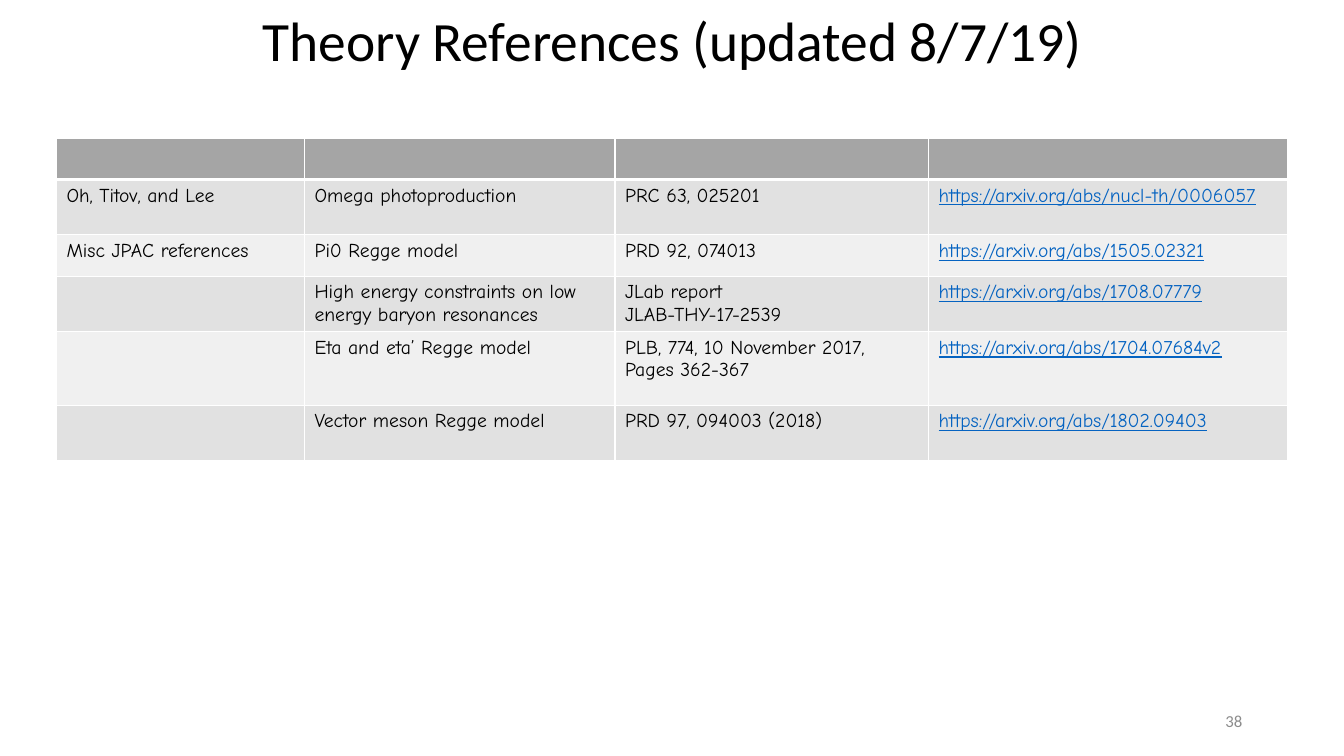
from lxml import etree
from pptx import Presentation
from pptx.dml.color import RGBColor
from pptx.enum.text import MSO_ANCHOR, MSO_AUTO_SIZE, PP_ALIGN
from pptx.oxml.ns import qn
from pptx.util import Inches, Pt

MIDDLE = MSO_ANCHOR.MIDDLE
NO_FIT = MSO_AUTO_SIZE.NONE
CENTER, RIGHT = PP_ALIGN.CENTER, PP_ALIGN.RIGHT

COLORS = {
    "text": "000000",
    "link": "0563C1",
    "number": "8C8C8C",
    "header": "A5A5A5",
    "odd": "E1E1E1",
    "even": "F0F0F0",
    "border": "FFFFFF",
}
TITLE = {"name": "Calibri", "size": Pt(39.6)}
NUMBER = {"name": "Calibri", "size": Pt(12)}
BODY = {"name": "Comic Neue", "size": Pt(14)}
LINK = {**BODY, "underline": True}

COL_WIDTHS = [2.46, 3.08, 3.11, 3.56]
ROW_HEIGHTS = [0.41, 0.55, 0.41, 0.55, 0.73, 0.55]
REFERENCES = [
    ["", "", "", ""],
    ["Oh, Titov, and Lee", "Omega photoproduction", "PRC 63, 025201",
     "https://arxiv.org/abs/nucl-th/0006057"],
    ["Misc JPAC references", "Pi0 Regge model", "PRD 92, 074013",
     "https://arxiv.org/abs/1505.02321"],
    ["", "High energy constraints on low energy baryon resonances",
     "JLab report\nJLAB-THY-17-2539", "https://arxiv.org/abs/1708.07779"],
    ["", "Eta and eta’ Regge model",
     "PLB, 774, 10 November 2017, Pages 362-367",
     "https://arxiv.org/abs/1704.07684v2"],
    ["", "Vector meson Regge model", "PRD 97, 094003 (2018)",
     "https://arxiv.org/abs/1802.09403"],
]


def rgb(key):
    return RGBColor.from_string(COLORS[key])


def write(tf, text, font, color, align=None):
    tf.text = text
    for p in tf.paragraphs:
        p.alignment = align
        for r in p.runs:
            for name, value in font.items():
                setattr(r.font, name, value)
            r.font.color.rgb = rgb(color)


def set_borders(cell, bottom):
    tcPr = cell._tc.get_or_add_tcPr()
    for side, width in (("L", 1), ("R", 1), ("T", 1), ("B", bottom)):
        ln = etree.SubElement(tcPr, qn(f"a:ln{side}"), w=str(Pt(width)))
        fill = etree.SubElement(ln, qn("a:solidFill"))
        etree.SubElement(fill, qn("a:srgbClr"), val=COLORS["border"])


def add_title(s, box):
    sp = s.shapes.title
    sp.left, sp.top, sp.width, sp.height = map(Inches, box)
    tf = sp.text_frame
    tf.auto_size, tf.vertical_anchor = NO_FIT, MIDDLE
    write(tf, "Theory References (updated 8/7/19)", TITLE, "text", CENTER)
    tf.paragraphs[0].line_spacing = 0.9


def add_page_number(s, box):
    tf = s.shapes.add_textbox(*map(Inches, box)).text_frame
    tf.word_wrap, tf.auto_size, tf.vertical_anchor = True, NO_FIT, MIDDLE
    write(tf, "38", NUMBER, "number", RIGHT)


def add_references(s, left, top):
    box = (left, top, sum(COL_WIDTHS), sum(ROW_HEIGHTS))
    table = s.shapes.add_table(len(ROW_HEIGHTS), len(COL_WIDTHS),
                               *map(Inches, box)).table
    for col, width in zip(table.columns, COL_WIDTHS):
        col.width = Inches(width)
    for i, (row, height) in enumerate(zip(table.rows, ROW_HEIGHTS)):
        row.height = Inches(height)
        band = "header" if i == 0 else "odd" if i % 2 else "even"
        for cell, text in zip(row.cells, REFERENCES[i]):
            # Borders come before the fill in the cell properties
            set_borders(cell, 3 if i == 0 else 1)
            cell.fill.solid()
            cell.fill.fore_color.rgb = rgb(band)
            is_link = text.startswith("https")
            if text:
                write(cell.text_frame, text, LINK if is_link else BODY,
                      "link" if is_link else "text")


def main():
    prs = Presentation()
    prs.slide_width, prs.slide_height = Inches(13.33), Inches(7.5)
    s = prs.slides.add_slide(prs.slide_layouts[5])
    add_title(s, (2.17, 0.08, 9, 0.7))
    add_page_number(s, (9.42, 6.95, 3, 0.4))
    add_references(s, 0.56, 1.37)
    prs.save("out.pptx")


if __name__ == "__main__":
    main()
